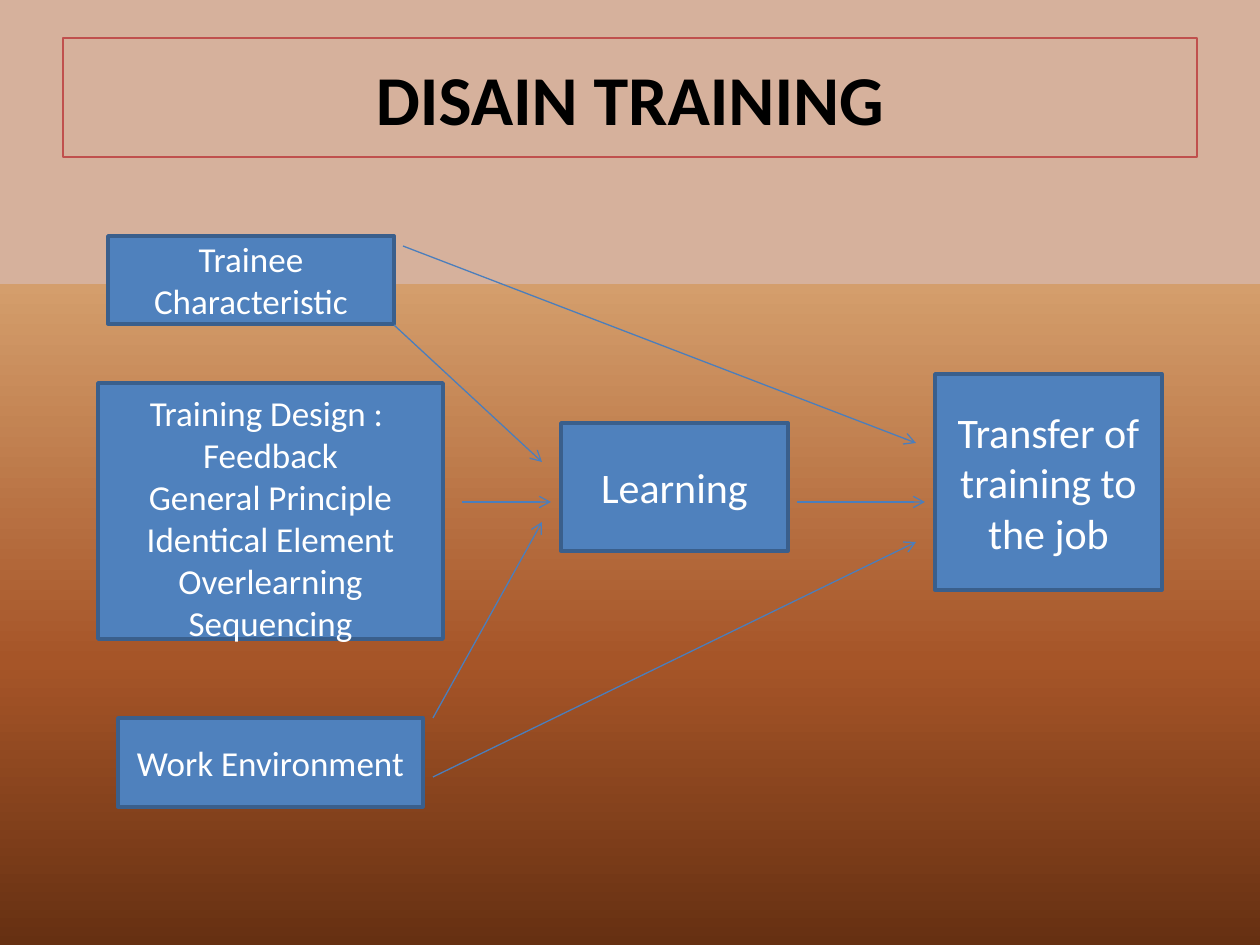
from lxml import etree
from pptx import Presentation
from pptx.dml.color import RGBColor
from pptx.enum.shapes import MSO_CONNECTOR, MSO_SHAPE
from pptx.enum.text import MSO_ANCHOR, PP_ALIGN
from pptx.oxml.ns import qn
from pptx.util import Emu, Pt

PX_PER_INCH = 126
TITLE_ONLY = 5
RECTANGLE = MSO_SHAPE.RECTANGLE
STRAIGHT = MSO_CONNECTOR.STRAIGHT
CENTER = PP_ALIGN.CENTER
TOP, MIDDLE = MSO_ANCHOR.TOP, MSO_ANCHOR.MIDDLE

FONT = "Calibri"
BLACK = RGBColor(0x00, 0x00, 0x00)
WHITE = RGBColor(0xFF, 0xFF, 0xFF)
RED = RGBColor(0xC0, 0x50, 0x4D)
BLUE = RGBColor(0x4F, 0x81, 0xBD)
DARK_BLUE = RGBColor(0x3A, 0x5F, 0x8C)
ARROW_BLUE = RGBColor(0x4B, 0x7E, 0xBC)
SUNSET = [
    (30, RGBColor(0xD6, 0xB1, 0x9C)),
    (30, RGBColor(0xD4, 0x9E, 0x6C)),
    (70, RGBColor(0xA6, 0x55, 0x28)),
    (100, RGBColor(0x66, 0x30, 0x12)),
]

DESIGN_LINES = ["Training Design : ", "Feedback", "General Principle",
                "Identical Element", "Overlearning", "Sequencing"]

# left, top, width, height, text size, text
BOXES = [
    (108, 236, 286, 88, 20, "Trainee Characteristic"),
    (98, 383, 345, 256, 20, "\n".join(DESIGN_LINES)),
    (118, 718, 305, 89, 20, "Work Environment"),
    (561, 423, 227, 128, 24, "Learning"),
    (935, 374, 227, 216, 24, "Transfer of training to the job"),
]

# start x, start y, end x, end y
ARROWS = [
    (462, 502, 551, 502),
    (433, 718, 542, 522),
    (394, 325, 542, 462),
    (797, 502, 925, 502),
    (403, 246, 916, 443),
    (433, 777, 916, 542),
]


def px(length):
    return Emu(round(length * 914400 / PX_PER_INCH))


def paint_background(page):
    """Fill the page with a top-to-bottom gradient of the SUNSET stops."""
    fill = page.background.fill
    fill.gradient()
    fill.gradient_angle = 270
    stops = next(page.element.iter(qn("a:gsLst")))
    for stop in list(stops):
        stops.remove(stop)
    for percent, color in SUNSET:
        stop = etree.SubElement(stops, qn("a:gs"), pos=str(percent * 1000))
        etree.SubElement(stop, qn("a:srgbClr"), val=str(color))


def format_text(frame, size, color, bold=False):
    for para in frame.paragraphs:
        para.alignment = CENTER
        for span in para.runs:
            span.font.name = FONT
            span.font.size = Pt(size)
            span.font.bold = bold
            span.font.color.rgb = color


def set_line(item, color, width):
    item.line.color.rgb = color
    item.line.width = Pt(width)


def add_title(page, text):
    title = page.shapes.title
    title.left, title.top, title.width, title.height = map(px, (63, 38, 1134, 119))
    set_line(title, RED, 0.75)
    title.text_frame.text = text
    title.text_frame.vertical_anchor = MIDDLE
    format_text(title.text_frame, 40, BLACK, bold=True)


def add_box(page, left, top, width, height, size, text):
    box = page.shapes.add_shape(RECTANGLE, px(left), px(top), px(width), px(height))
    box.shadow.inherit = False
    box.fill.solid()
    box.fill.fore_color.rgb = BLUE
    set_line(box, DARK_BLUE, 2)
    frame = box.text_frame
    frame.word_wrap = True
    frame.text = text
    frame.vertical_anchor = MIDDLE
    format_text(frame, size, WHITE)
    return box


def add_arrow(page, *ends):
    arrow = page.shapes.add_connector(STRAIGHT, *map(px, ends))
    set_line(arrow, ARROW_BLUE, 0.75)
    etree.SubElement(arrow.line._get_or_add_ln(), qn("a:tailEnd"), type="arrow")
    etree.SubElement(arrow._element.spPr, qn("a:effectLst"))


def main():
    deck = Presentation()
    deck.slide_width, deck.slide_height = px(1260), px(945)
    page = deck.slides.add_slide(deck.slide_layouts[TITLE_ONLY])
    paint_background(page)
    add_title(page, "DISAIN TRAINING")
    boxes = [add_box(page, *box) for box in BOXES]

    # The list is as tall as its box, so it hangs from the top edge.
    design = boxes[1].text_frame
    design.vertical_anchor = TOP
    design.margin_top, design.margin_bottom = px(8), 0

    for ends in ARROWS:
        add_arrow(page, *ends)
    deck.save("out.pptx")


if __name__ == "__main__":
    main()
